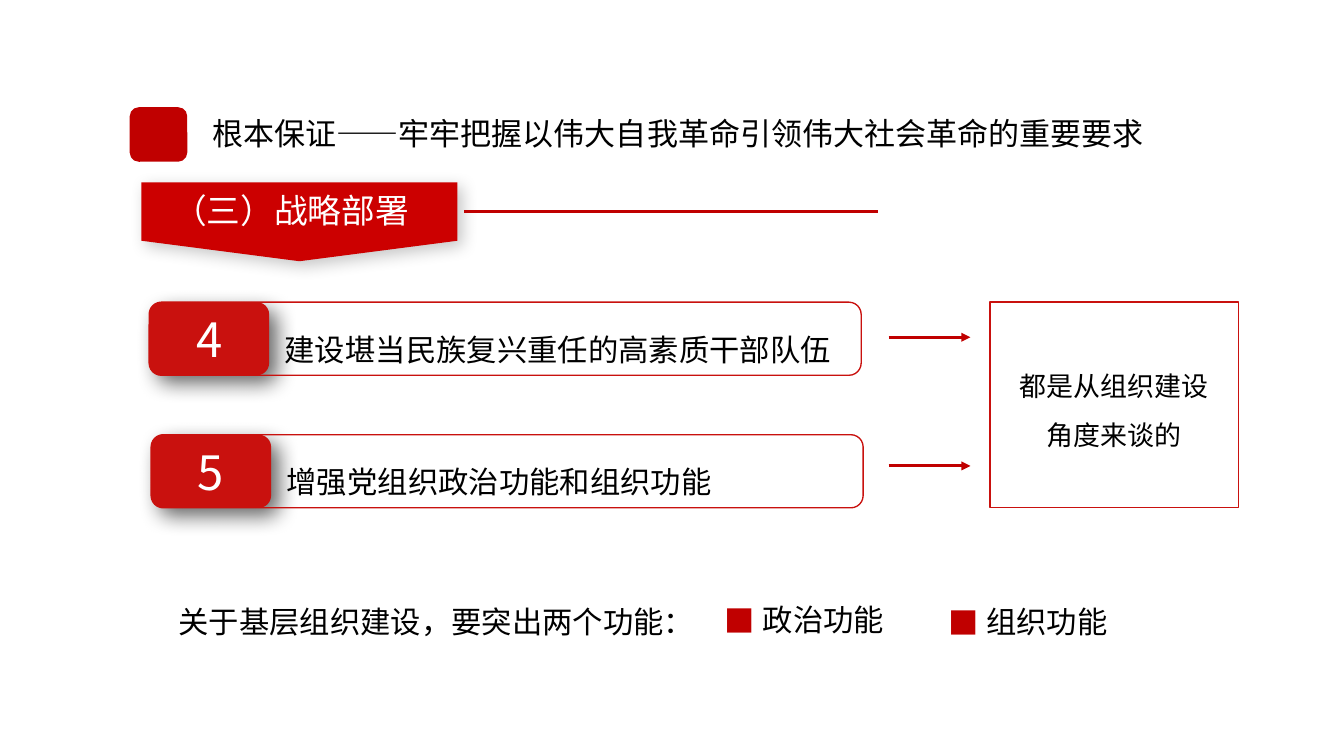
import pptx
import pptx.util
import pptx.dml.color
import pptx.enum.shapes
import pptx.enum.text
import pptx.oxml
import pptx.oxml.ns
import lxml.etree
from dataclasses import dataclass

# Content
TITLE = "根本保证——牢牢把握以伟大自我革命引领伟大社会革命的重要要求"
SECTION = "（三）战略部署"
MEASURES = [  # number, text, left, top
    ("4", "建设堪当民族复兴重任的高素质干部队伍", 153, 310),
    ("5", "增强党组织政治功能和组织功能", 155, 446),
]
ARROW_TOPS = [346, 478]
CONCLUSION = "都是从组织建设角度来谈的"
SUMMARY = "关于基层组织建设，要突出两个功能："
FUNCTIONS = [("政治功能", 733, 593), ("组织功能", 962, 595)]  # text, left, top


@dataclass(frozen=True)
class Theme:
    font: str = "Noto Sans CJK SC"
    dark_red: str = "C00000"
    red: str = "C9110E"
    banner_red: str = "CC0000"
    black: str = "000000"
    white: str = "FFFFFF"
    title: float = 22.9
    section: float = 24.9
    number: float = 34.9
    body: float = 22.4
    conclusion: float = 19.9


THEME = Theme()
PX = 9144  # one px is a hundredth of an inch
SHAPES = pptx.enum.shapes.MSO_SHAPE
ALIGN = pptx.enum.text.PP_ALIGN
ANCHOR = pptx.enum.text.MSO_ANCHOR


def px(*lengths):
    return [pptx.util.Emu(length * PX) for length in lengths]


def rgb(color):
    return pptx.dml.color.RGBColor.from_string(color)


def add_xml(parent, tag, **attributes):
    return lxml.etree.SubElement(parent, pptx.oxml.ns.qn(tag), attributes)


# Text
def write(shape, text, size, color=THEME.black, align=ALIGN.LEFT,
          spacing=1.0, anchor=ANCHOR.TOP, bullet=False):
    frame = shape.text_frame
    frame.word_wrap = True
    frame.auto_size = pptx.enum.text.MSO_AUTO_SIZE.NONE
    frame.vertical_anchor = anchor
    frame.text = text
    paragraph = frame.paragraphs[0]
    if bullet:
        properties = paragraph._p.get_or_add_pPr()
        indent = 39 * PX
        properties.set("marL", str(indent))
        properties.set("indent", str(-indent))
        add_xml(add_xml(properties, "a:buClr"), "a:srgbClr", val=THEME.dark_red)
        add_xml(properties, "a:buFont", typeface=THEME.font)
        add_xml(properties, "a:buChar", char="■")
    paragraph.alignment = align
    paragraph.line_spacing = spacing
    paragraph.space_before = pptx.util.Pt(0)
    for run in paragraph.runs:
        run.font.size = pptx.util.Pt(size)
        run.font.color.rgb = rgb(color)
        run.font.name = THEME.font
        add_xml(run._r.get_or_add_rPr(), "a:ea", typeface=THEME.font)


def place(shape, *box):
    shape.left, shape.top, shape.width, shape.height = px(*box)


def add_text(slide, box, text, size, **style):
    write(slide.shapes.add_textbox(*px(*box)), text, size, **style)


# Shapes and lines
def paint(shape, fill=None, line=None):
    shape.shadow.inherit = False
    if fill:
        shape.fill.solid()
        shape.fill.fore_color.rgb = rgb(fill)
    else:
        shape.fill.background()
    if line:
        shape.line.color.rgb = rgb(line)
        shape.line.width = pptx.util.Pt(1)
    else:
        shape.line.fill.background()


def add_box(slide, kind, box, **colors):
    shape = slide.shapes.add_shape(kind, *px(*box))
    paint(shape, **colors)
    return shape


def cast_shadow(shape, opacity, blur, distance):
    effects = shape._element.spPr.find(pptx.oxml.ns.qn("a:effectLst"))
    shadow = add_xml(effects, "a:outerShdw", blurRad=str(pptx.util.Pt(blur)),
                     dist=str(pptx.util.Pt(distance)), dir=str(45 * 60000),
                     algn="tl", rotWithShape="0")
    color = add_xml(shadow, "a:srgbClr", val=THEME.black)
    add_xml(color, "a:alpha", val=str(opacity * 1000))


def add_line(slide, left, right, top, width, arrow=False):
    line = slide.shapes.add_connector(
        pptx.enum.shapes.MSO_CONNECTOR.STRAIGHT, *px(left, top, right, top))
    line.line.color.rgb = rgb(THEME.dark_red)
    line.line.width = pptx.util.Pt(width)
    if arrow:
        add_xml(line.line._get_or_add_ln(), "a:tailEnd", type="triangle")
    add_xml(line._element.spPr, "a:effectLst")


def add_heading(slide):
    add_box(slide, SHAPES.ROUNDED_RECTANGLE, (133, 110, 59, 56), fill=THEME.dark_red)
    place(slide.shapes.title, 208, 112, 1045, 49)
    write(slide.shapes.title, TITLE, THEME.title)


def add_section(slide):
    left, right, top, shoulder, tip = 145, 469, 187, 247, 268
    builder = slide.shapes.build_freeform(left, top, scale=PX)
    builder.add_line_segments(
        [(right, top), (right, shoulder), ((left + right) // 2, tip), (left, shoulder)])
    banner = builder.convert_to_shape()
    paint(banner, fill=THEME.banner_red)
    cast_shadow(banner, 21, 12, 5)
    add_text(slide, (left, 190, 307, 52), SECTION, THEME.section,
             color=THEME.white, align=ALIGN.CENTER)
    add_line(slide, 476, 900, 217, 1.5)


def add_measure(slide, number, text, left, top):
    badge = add_box(slide, SHAPES.ROUNDED_RECTANGLE, (left, top, 123, 75), fill=THEME.red)
    cast_shadow(badge, 60, 16, 8)
    write(badge, number, THEME.number, color=THEME.white,
          align=ALIGN.CENTER, anchor=ANCHOR.MIDDLE)
    add_box(slide, SHAPES.ROUNDED_RECTANGLE, (left, top, 730, 75), line=THEME.red)
    add_text(slide, (left + 129, top + 6, 618, 57), text, THEME.body, spacing=1.5)


def add_conclusion(slide):
    for top in ARROW_TOPS:
        add_line(slide, 911, 995, top, 2.25, arrow=True)
    box = add_box(slide, SHAPES.RECTANGLE, (1015, 310, 255, 211), line=THEME.red)
    write(box, CONCLUSION, THEME.conclusion, align=ALIGN.CENTER,
          spacing=1.5, anchor=ANCHOR.MIDDLE)
    frame = box.text_frame
    frame.margin_left, frame.margin_right, frame.margin_bottom = px(20, 20, 11)


def add_summary(slide):
    add_text(slide, (173, 595, 618, 57), SUMMARY, THEME.body, spacing=1.5)
    bodies = list(slide.placeholders)[1:]
    for body, (text, left, top) in zip(bodies, FUNCTIONS):
        place(body, left, top, 203, 57)
        write(body, text, THEME.body, spacing=1.5, bullet=True)


def main():
    presentation = pptx.Presentation()
    presentation.slide_width, presentation.slide_height = px(1378, 752)
    two_content = presentation.slide_layouts[3]
    slide = presentation.slides.add_slide(two_content)
    add_heading(slide)
    add_section(slide)
    for measure in MEASURES:
        add_measure(slide, *measure)
    add_conclusion(slide)
    add_summary(slide)
    presentation.save("out.pptx")


if __name__ == "__main__":
    main()
